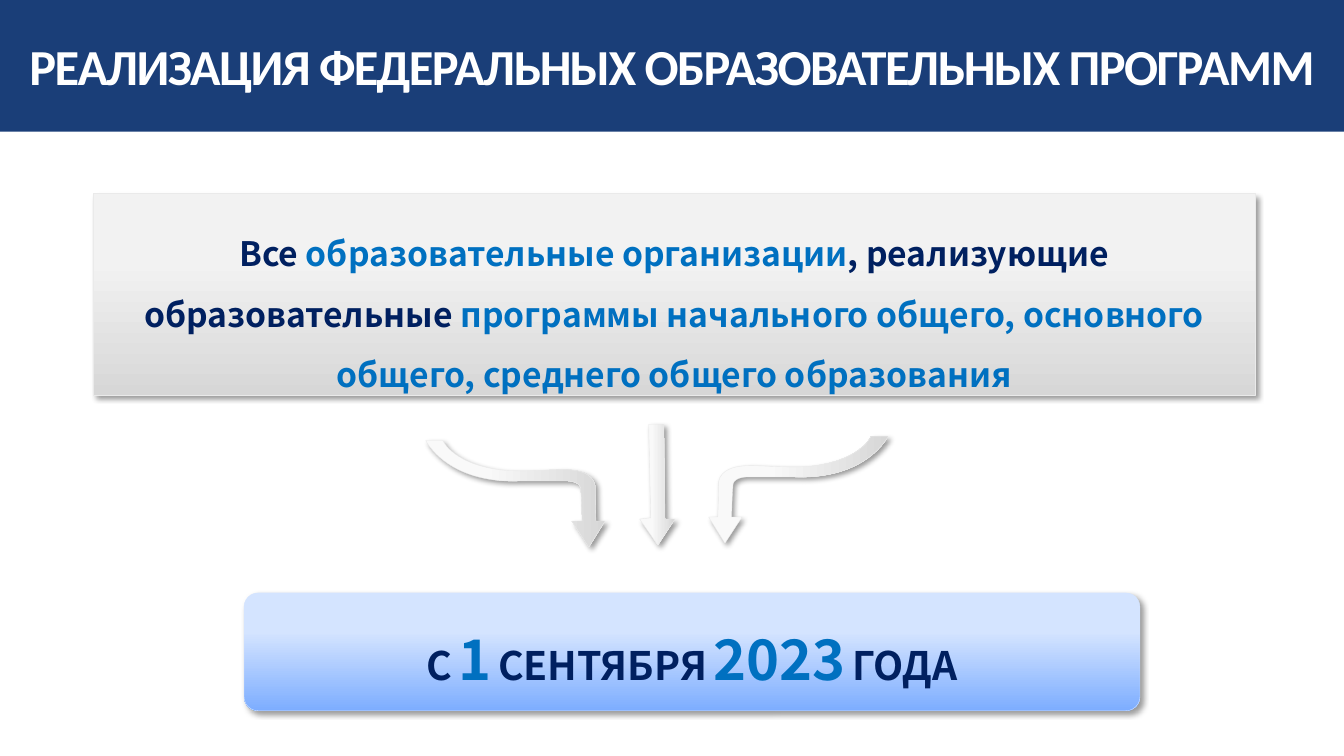
from lxml import etree
from pptx import Presentation
from pptx import util as u
from pptx.dml.color import RGBColor
from pptx.enum import shapes, text
from pptx.oxml.ns import qn

COLORS = {
    "banner": "1A3E78", "white": "FFFFFF", "navy": "002060", "blue": "0070C0",
    "panel_top": "F2F2F2", "arrow_light": "F9F9F9", "grey": "D7D7D7", "grey_edge": "EAEAEA",
    "date_top": "D4E4FF", "date_bottom": "7DADFF", "shadow": "000000",
}
BODY_FONT = "Noto Sans CJK SC"

# Outlines in hundredths of a centimetre: two numbers make a line, six a Bézier curve
BENT_ARROW = [
    (0, 0), (0, 0, 53, 109, 236, 102), (295, 102, 356, 102, 356, 102),
    (356, 102, 394, 102, 391, 127), (394, 165, 394, 203, 394, 203),
    (368, 203), (411, 269), (452, 203), (429, 203),
    (429, 203, 427, 160, 427, 114), (422, 81, 378, 76, 378, 76),
    (343, 69, 292, 79, 206, 76), (69, 64, 43, 0, 43, 0), (0, 0),
]
STRAIGHT_ARROW = [(23, 0), (28, 236), (0, 239), (46, 305), (89, 239), (64, 239), (61, 0), (23, 0)]
BENT_WIDTH = 452


def color(name):
    return RGBColor.from_string(COLORS[name])


def add_text(paragraph, content, size, fill="navy", font=BODY_FONT, spacing=None):
    run = paragraph.add_run()
    run.text = content
    run.font.name = font
    run.font.size = u.Pt(size)
    run.font.bold = True
    run.font.color.rgb = color(fill)
    if spacing is not None:
        run.font._element.set("spc", str(round(spacing * 100)))


def set_frame(shape, anchor, left, top, right, bottom):
    """Set anchor and insets in centimetres; return the first paragraph, centred."""
    frame = shape.text_frame
    frame.word_wrap = True
    frame.auto_size = text.MSO_AUTO_SIZE.NONE
    frame.vertical_anchor = anchor
    frame.margin_left, frame.margin_top = u.Cm(left), u.Cm(top)
    frame.margin_right, frame.margin_bottom = u.Cm(right), u.Cm(bottom)
    paragraph = frame.paragraphs[0]
    paragraph.alignment = text.PP_ALIGN.CENTER
    return paragraph


def style_raised(shape, start, end, edge, angle=270):
    """Apply the gradient, hairline and soft shadow shared by panels and arrows."""
    shape.fill.gradient()
    shape.fill.gradient_angle = angle
    for stop, name, position in zip(shape.fill.gradient_stops, (start, end), (0.33, 1)):
        stop.color.rgb = color(name)
        stop.position = position
    shape.line.color.rgb = color(edge)
    shape.line.width = u.Pt(0.25)
    shape.shadow.inherit = False
    effects = shape._element.spPr.find(qn("a:effectLst"))
    shadow = etree.SubElement(effects, qn("a:outerShdw"), blurRad=str(u.Pt(4)),
                              dist=str(u.Pt(3)), dir="2700000", algn="tl", rotWithShape="0")
    tone = etree.SubElement(shadow, qn("a:srgbClr"), val=COLORS["shadow"])
    etree.SubElement(tone, qn("a:alpha"), val="40000")


def place(shape, left, top, width, height):
    shape.left, shape.top = u.Cm(left), u.Cm(top)
    shape.width, shape.height = u.Cm(width), u.Cm(height)


def add_banner(slide, left, top, width, height):
    title = slide.shapes.title
    place(title, left, top, width, height)
    title.fill.solid()
    title.fill.fore_color.rgb = color("banner")
    paragraph = set_frame(title, text.MSO_ANCHOR.MIDDLE, 0.25, 0.13, 0.25, 0.13)
    add_text(paragraph, "РЕАЛИЗАЦИЯ ФЕДЕРАЛЬНЫХ ОБРАЗОВАТЕЛЬНЫХ ПРОГРАММ", 36,
             fill="white", font="Calibri", spacing=-1.13)


def add_panel(slide, kind, box):
    return slide.shapes.add_shape(kind, *(u.Cm(length) for length in box))


def add_date(slide, *box):
    shape = add_panel(slide, shapes.MSO_SHAPE.ROUNDED_RECTANGLE, box)
    shape.adjustments[0] = 0.12
    style_raised(shape, "date_top", "date_bottom", "date_top")
    paragraph = set_frame(shape, text.MSO_ANCHOR.MIDDLE, 0, 0.13, 0, 0.13)
    paragraph.line_spacing = 1.2
    paragraph.space_before = paragraph.space_after = u.Pt(6)
    for index, word in enumerate(["С", "1", "СЕНТЯБРЯ", "2023", "ГОДА"]):
        if index:
            add_text(paragraph, " ", 20)
        if word.isdigit():
            add_text(paragraph, word, 40, fill="blue")
        else:
            add_text(paragraph, word, 28)


def add_organisations(slide, *box):
    shape = add_panel(slide, shapes.MSO_SHAPE.RECTANGLE, box)
    style_raised(shape, "panel_top", "grey", "grey_edge")
    paragraph = set_frame(shape, text.MSO_ANCHOR.TOP, 0.5, 0.49, 0.5, 0.13)
    paragraph.line_spacing = 1.5
    paragraph.space_before = u.Pt(12)
    for content, fill in [
        ("Все ", "navy"),
        ("образовательные организации", "blue"),
        (", реализующие образовательные ", "navy"),
        ("программы начального общего, основного общего, среднего общего образования", "blue"),
    ]:
        add_text(paragraph, content, 24, fill=fill)


def mirror(outline, width):
    return [tuple(width - value if index % 2 == 0 else value
                  for index, value in enumerate(segment)) for segment in outline]


def add_arrow(group, outline, left, top):
    """Draw the outline through its end points, then bend the curved segments."""
    ends = [segment[-2:] for segment in outline]
    builder = group.shapes.build_freeform(*ends[0], scale=u.Cm(0.01))
    builder.add_line_segments(ends[1:], close=True)
    arrow = builder.convert_to_shape(u.Cm(left), u.Cm(top))
    lines = list(arrow._element.iter(qn("a:lnTo")))
    for line, segment in zip(lines, outline[1:]):
        if len(segment) == 6:
            curve = etree.Element(qn("a:cubicBezTo"))
            for x, y in zip(segment[::2], segment[1::2]):
                etree.SubElement(curve, qn("a:pt"), x=str(x), y=str(y))
            line.getparent().replace(line, curve)
    style_raised(arrow, "arrow_light", "grey", "grey_edge", angle=0)


def add_arrows(slide, left, top):
    group = slide.shapes.add_group_shape()
    add_arrow(group, BENT_ARROW, left, top + 0.41)
    add_arrow(group, STRAIGHT_ARROW, left + 5.39, top)
    add_arrow(group, mirror(BENT_ARROW, BENT_WIDTH), left + 7.13, top + 0.31)


def main():
    presentation = Presentation()
    presentation.slide_width, presentation.slide_height = u.Cm(33.87), u.Cm(19.05)
    slide = presentation.slides.add_slide(presentation.slide_layouts[5])
    add_banner(slide, 0, -0.04, 33.87, 3.36)
    add_date(slide, 6.15, 14.94, 22.58, 2.97)
    add_arrows(slide, 10.73, 10.69)
    add_organisations(slide, 2.34, 4.88, 29.29, 5.08)
    presentation.save("out.pptx")


if __name__ == "__main__":
    main()
